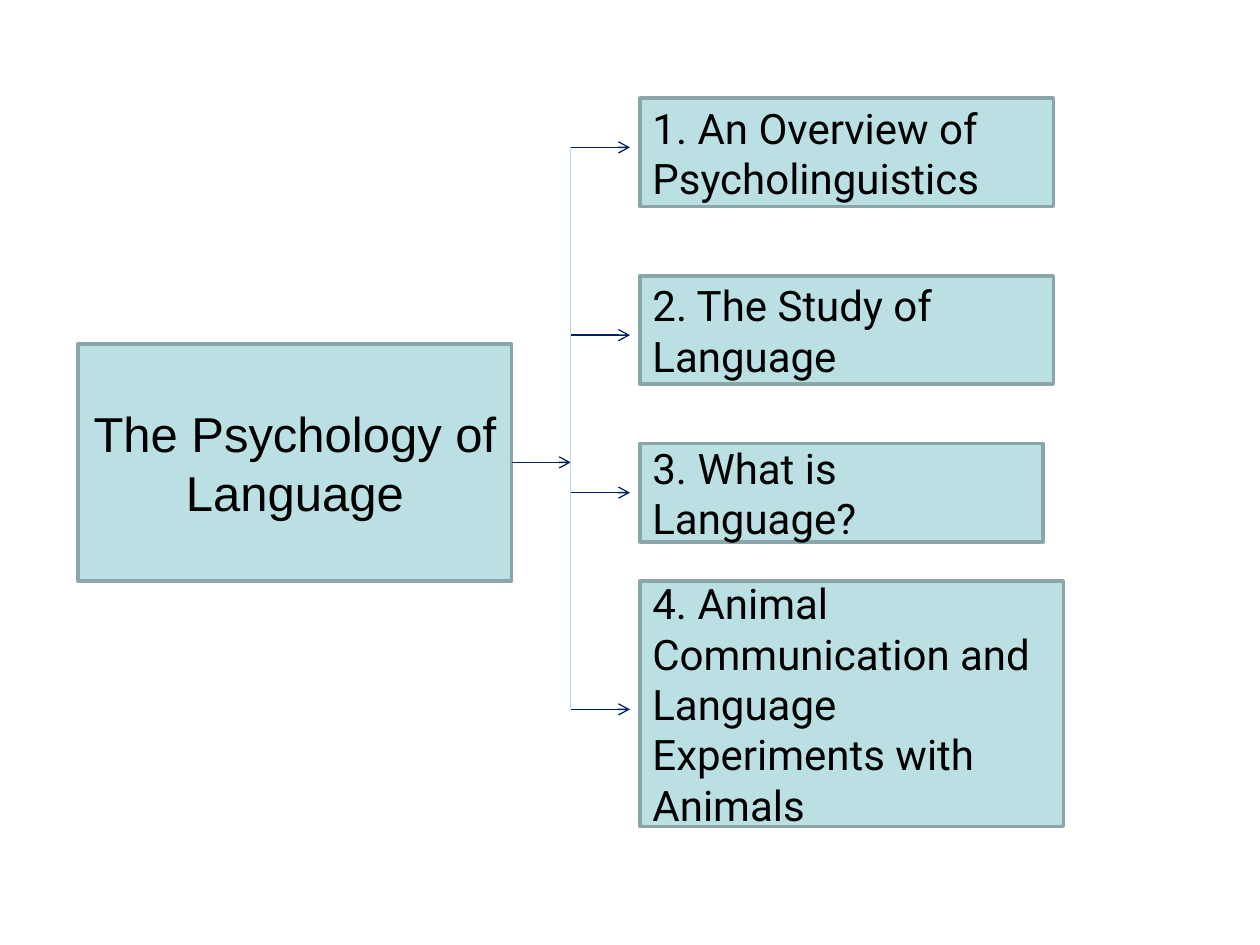
from lxml import etree
from pptx import Presentation
from pptx.dml.color import RGBColor
from pptx.enum.shapes import MSO_CONNECTOR as CONNECTOR, MSO_SHAPE as SHAPE
from pptx.enum.text import MSO_ANCHOR as ANCHOR, PP_ALIGN as ALIGN
from pptx.oxml.ns import qn
from pptx.util import Inches, Pt

COLORS = {"fill": "BBE0E3", "border": "8AA6A8", "text": "000000",
          "arrow": "002060", "trunk": "B6DCDF"}
ROOT_FONT = {"name": "Arial", "size": Pt(28)}
TOPIC_FONT = {"name": "Roboto", "size": Pt(24)}

ROOT_BOX = (0.62, 2.73, 3.44, 1.88)
BRANCH_BOX = (4.53, 1.17, 0.47, 4.46)
TOPIC_LEFT = 5.08
# Text, top, width, height, height of the arrow that points to it
TOPICS = [
    ("1. An Overview of Psycholinguistics", 0.78, 3.28, 0.86, 1.17),
    ("2. The Study of Language", 2.19, 3.28, 0.86, 2.66),
    ("3. What is Language?", 3.52, 3.2, 0.78, 3.91),
    ("4. Animal Communication and Language Experiments with Animals",
     4.61, 3.36, 1.95, 5.63),
]


def color(name):
    return RGBColor.from_string(COLORS[name])


def add_box(slide, box, text, font, align):
    shape = slide.shapes.add_shape(SHAPE.RECTANGLE, *map(Inches, box))
    shape.shadow.inherit = False
    shape.fill.solid()
    shape.fill.fore_color.rgb = color("fill")
    shape.line.color.rgb = color("border")
    shape.line.width = Pt(2)
    frame = shape.text_frame
    frame.word_wrap = True
    frame.vertical_anchor = ANCHOR.MIDDLE
    paragraph = frame.paragraphs[0]
    paragraph.alignment = align
    run = paragraph.add_run()
    run.text = text
    run.font.color.rgb = color("text")
    for attribute, value in font.items():
        setattr(run.font, attribute, value)
    return shape


def add_line(slide, start, end, color_name, arrow=True):
    line = slide.shapes.add_connector(CONNECTOR.STRAIGHT,
                                      *map(Inches, start + end))
    line.line.color.rgb = color(color_name)
    line.line.width = Pt(0.75)
    properties = line._element.spPr
    if arrow:
        etree.SubElement(properties.find(qn("a:ln")), qn("a:tailEnd"),
                         type="arrow")
    etree.SubElement(properties, qn("a:effectLst"))
    return line


def add_branches(slide, box, root, root_box, arrow_heights):
    left, top, width, height = box
    root_left, root_top, root_width, root_height = root_box
    middle = root_top + root_height / 2

    # Stem from the root, then the trunk
    stem = add_line(slide, (root_left + root_width, middle), (left, middle),
                    "arrow")
    stem.begin_connect(root, 3)
    add_line(slide, (left, top), (left, top + height), "trunk", arrow=False)

    # One arrow for each topic
    for y in arrow_heights:
        add_line(slide, (left, y), (left + width, y), "arrow")


def add_topics(slide, left):
    for text, top, width, height, _ in TOPICS:
        add_box(slide, (left, top, width, height), text, TOPIC_FONT, ALIGN.LEFT)


def main():
    presentation = Presentation()
    presentation.slide_width = Inches(10)
    presentation.slide_height = Inches(7.5)
    slide = presentation.slides.add_slide(presentation.slide_layouts[6])

    root = add_box(slide, ROOT_BOX, "The Psychology of Language",
                   ROOT_FONT, ALIGN.CENTER)
    add_branches(slide, BRANCH_BOX, root, ROOT_BOX,
                 [topic[-1] for topic in TOPICS])
    add_topics(slide, TOPIC_LEFT)

    presentation.save("out.pptx")


if __name__ == "__main__":
    main()
